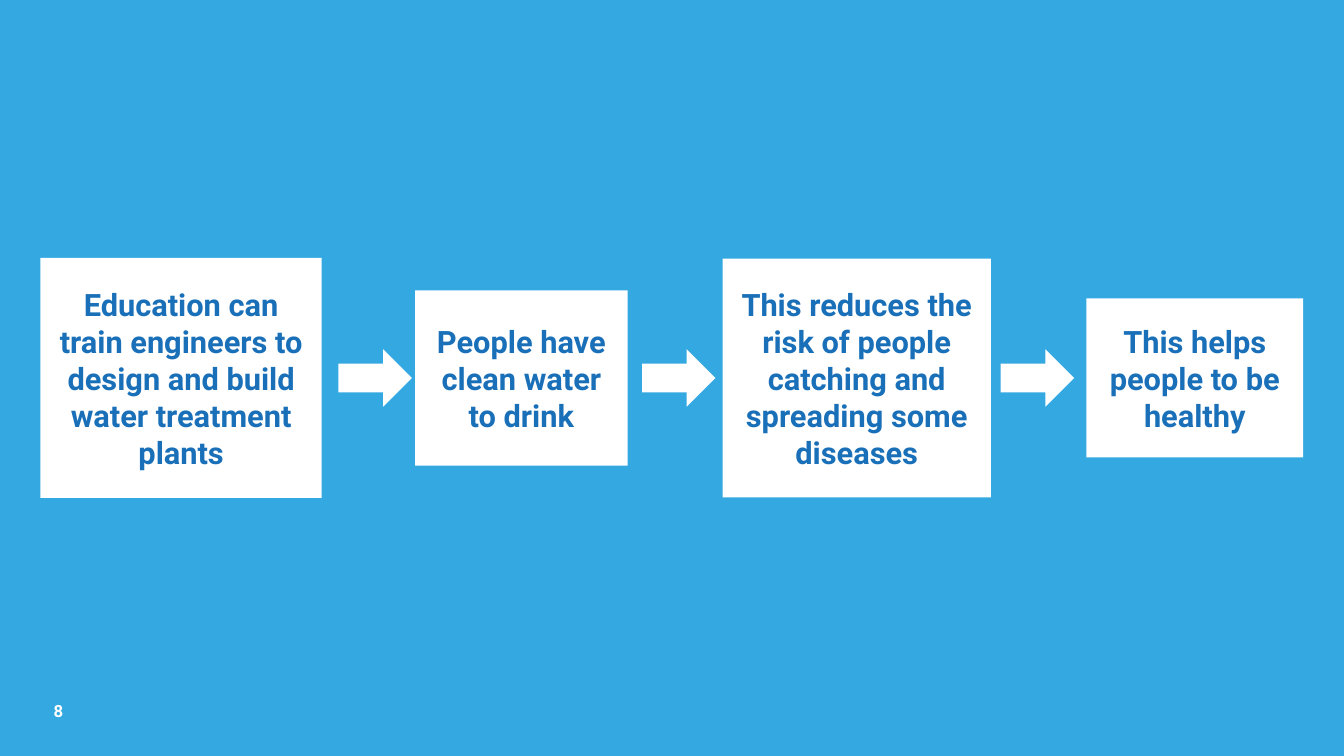
from dataclasses import dataclass

from pptx import Presentation
from pptx import util as u
from pptx.dml.color import RGBColor
from pptx.enum import shapes, text


@dataclass(frozen=True)
class Theme:
    background: RGBColor = RGBColor(0x34, 0xA9, 0xE1)
    panel: RGBColor = RGBColor(0xFF, 0xFF, 0xFF)
    step_text: RGBColor = RGBColor(0x1A, 0x70, 0xB8)
    font: str = "Roboto"
    step_size: int = 22
    number_size: int = 12


THEME = Theme()

# Left offset within the chain, width, height (cm) and wording
STEPS = [
    (0, 7.09, 6.05, "Education can train engineers to design and build water treatment plants"),
    (9.44, 5.36, 4.42, "People have clean water to drink"),
    (17.19, 6.76, 6.02, "This reduces the risk of people catching and spreading some diseases"),
    (26.36, 5.46, 4.01, "This helps people to be healthy"),
]
ARROW_LEFTS = [7.51, 15.16, 24.2]
ARROW_SIZE = (1.85, 1.45)


def add_bold_run(p, words, size, color):
    r = p.add_run()
    r.text = words
    r.font.name = THEME.font
    r.font.size = u.Pt(size)
    r.font.bold = True
    r.font.color.rgb = color


def add_centred_shape(slide, kind, left, middle, width, height):
    """Place a plain white shape whose vertical centre lies at middle."""
    sp = slide.shapes.add_shape(
        kind, u.Cm(left), u.Cm(middle - height / 2), u.Cm(width), u.Cm(height))
    sp.shadow.inherit = False
    sp.fill.solid()
    sp.fill.fore_color.rgb = THEME.panel
    sp.line.fill.background()
    return sp


def add_chain(slide, left, top, height):
    """Draw the steps and arrows along the middle of the given band."""
    middle = top + height / 2
    for offset, step_width, step_height, words in STEPS:
        sp = add_centred_shape(slide, shapes.MSO_SHAPE.RECTANGLE,
                               left + offset, middle, step_width, step_height)
        tf = sp.text_frame
        tf.word_wrap = True
        tf.vertical_anchor = text.MSO_ANCHOR.MIDDLE
        p = tf.paragraphs[0]
        p.alignment = text.PP_ALIGN.CENTER
        add_bold_run(p, words, THEME.step_size, THEME.step_text)
    for offset in ARROW_LEFTS:
        add_centred_shape(slide, shapes.MSO_SHAPE.RIGHT_ARROW,
                          left + offset, middle, *ARROW_SIZE)


def add_page_number(slide, number, left, top, width, height):
    box = slide.shapes.add_textbox(u.Cm(left), u.Cm(top), u.Cm(width), u.Cm(height))
    tf = box.text_frame
    tf.word_wrap = True
    tf.vertical_anchor = text.MSO_ANCHOR.BOTTOM
    tf.margin_left = tf.margin_top = tf.margin_right = tf.margin_bottom = 0
    add_bold_run(tf.paragraphs[0], number, THEME.number_size, THEME.panel)


def main():
    prs = Presentation()
    prs.slide_width, prs.slide_height = u.Cm(33.87), u.Cm(19.05)
    slide = prs.slides.add_slide(prs.slide_layouts[6])
    slide.background.fill.solid()
    slide.background.fill.fore_color.rgb = THEME.background
    add_page_number(slide, "8", left=1.35, top=17.35, width=1.85, height=0.81)
    add_chain(slide, left=1.02, top=0, height=19.05)
    prs.save("out.pptx")


if __name__ == "__main__":
    main()
